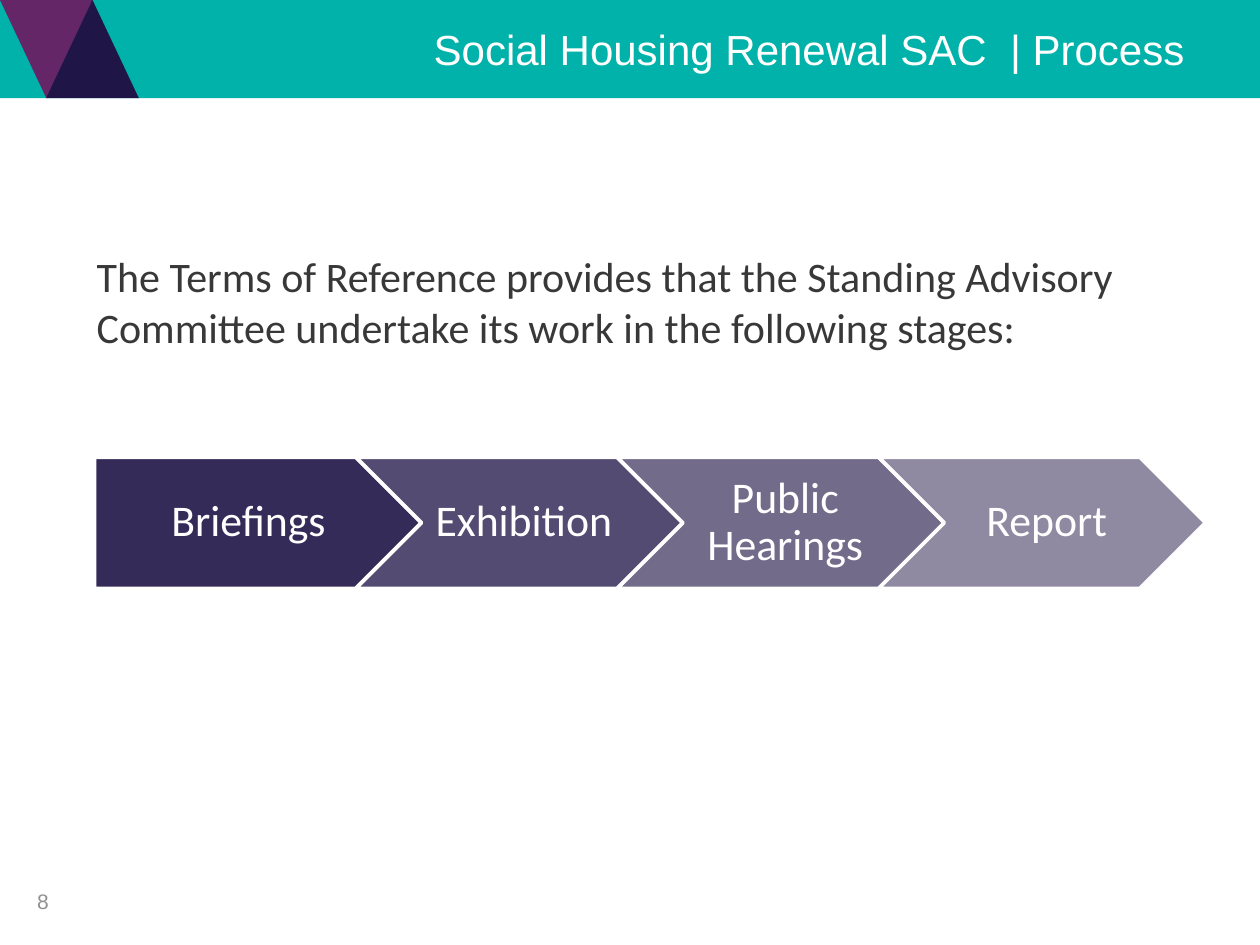
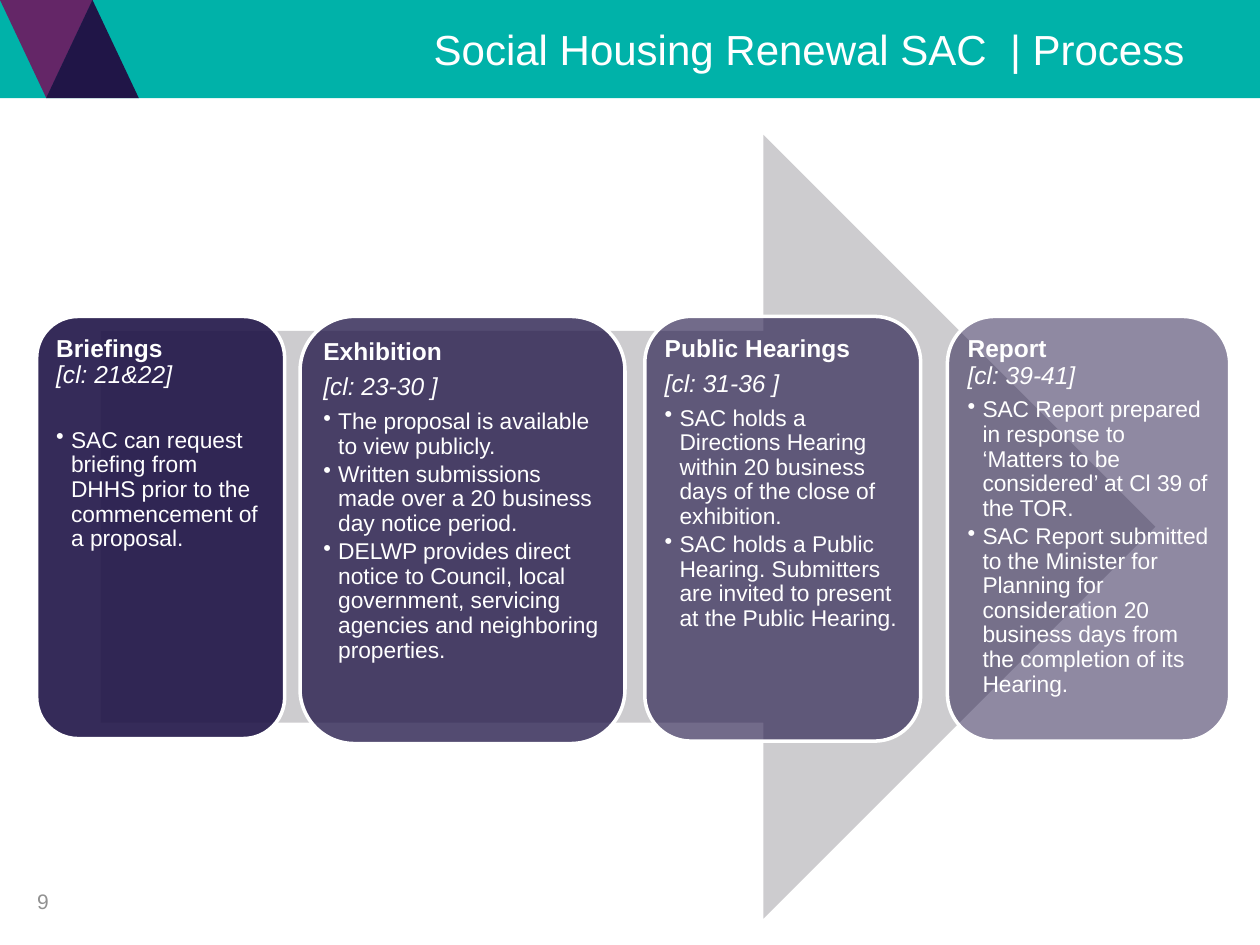
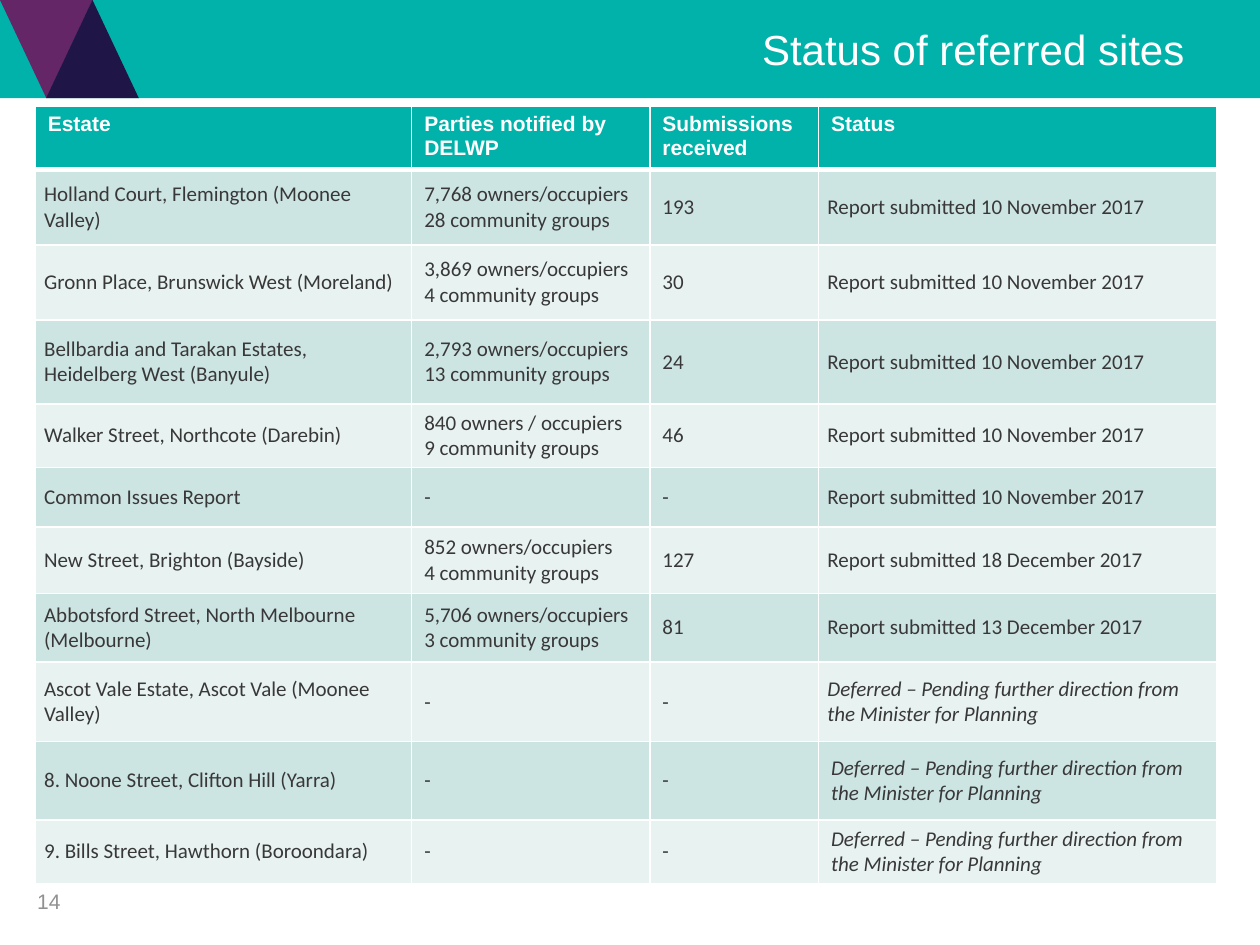
from lxml import etree
from pptx import Presentation
from pptx import util as u
from pptx.dml.color import RGBColor
from pptx.enum import shapes, text
from pptx.oxml import ns

TEAL = RGBColor(0x00, 0xB2, 0xA9)
PLUM = RGBColor(0x64, 0x26, 0x67)
NAVY = RGBColor(0x20, 0x15, 0x47)
WHITE = RGBColor(0xFF, 0xFF, 0xFF)
INK = RGBColor(0x39, 0x38, 0x38)
PAGE_GREY = RGBColor(0x91, 0x91, 0x91)
ARROW_GREY = RGBColor(0xCD, 0xCC, 0xCF)
ROW_TINTS = [RGBColor(0xCC, 0xE4, 0xE2), RGBColor(0xE7, 0xF2, 0xF1)]
STAGE_OPACITY = [90, 77, 63, 50]

PRESET = shapes.MSO_SHAPE
ALIGN = text.PP_ALIGN
MIDDLE = text.MSO_ANCHOR.MIDDLE


def add_block(slide, preset, box, color, opacity=None):
    """Add a plain filled shape; stage blocks get an opacity and a white outline."""
    block = slide.shapes.add_shape(preset, *[u.Cm(length) for length in box])
    block.shadow.inherit = False
    block.fill.solid()
    block.fill.fore_color.rgb = color
    if opacity is None:
        block.line.fill.background()
    else:
        block.line.color.rgb = WHITE
        block.line.width = u.Pt(2)
        tint = block.fill._xPr.find(".//" + ns.qn("a:srgbClr"))
        etree.SubElement(tint, ns.qn("a:alpha"), val=str(opacity * 1000))
    return block


def style(paragraph, size, color, font="Arial", align=ALIGN.LEFT, bold=False, italic=False):
    paragraph.alignment = align
    for run in paragraph.runs:
        run.font.size = u.Pt(size)
        run.font.name = font
        run.font.color.rgb = color
        run.font.bold = bold
        run.font.italic = italic


prs = Presentation()
prs.slide_width, prs.slide_height = u.Cm(25.4), u.Cm(19.05)

# Shared band, title and page number
pages = [
    ("Social Housing Renewal SAC  | Process", "8"),
    ("Social Housing Renewal SAC  | Process", "9"),
    ("Status of referred sites", "14"),
]
for title, number in pages:
    slide = prs.slides.add_slide(prs.slide_layouts[6])
    add_block(slide, PRESET.RECTANGLE, (0, 0, 25.4, 1.98), TEAL)
    plum_triangle = add_block(slide, PRESET.ISOSCELES_TRIANGLE, (0, 0, 1.87, 1.98), PLUM)
    plum_triangle.rotation = 180
    add_block(slide, PRESET.ISOSCELES_TRIANGLE, (0.93, 0, 1.87, 1.98), NAVY)
    for words, box, size, color, align in [
        (title, (3.3, 0, 20.83, 1.98), 24, WHITE, ALIGN.RIGHT),
        (number, (0.5, 17.65, 5.92, 1.02), 12, PAGE_GREY, ALIGN.LEFT),
    ]:
        frame = slide.shapes.add_textbox(*[u.Cm(length) for length in box]).text_frame
        frame.word_wrap = True
        frame.vertical_anchor = MIDDLE
        frame.text = words
        style(frame.paragraphs[0], size, color, align=align)

overview, stages, sites = prs.slides

# Overview: introduction
intro = overview.shapes.add_textbox(u.Cm(1.7), u.Cm(4.93), u.Cm(22.4), u.Cm(2.59)).text_frame
intro.word_wrap = True
intro.text = ("The Terms of Reference provides that the Standing Advisory Committee "
              "undertake its work in the following stages:")
style(intro.paragraphs[0], 24, INK, "Calibri")

# Overview: chain of stages
stage_names = ["Briefings", "Exhibition", "Public Hearings", "Report"]
for i, (name, opacity) in enumerate(zip(stage_names, STAGE_OPACITY)):
    preset = PRESET.CHEVRON if i else PRESET.PENTAGON
    link = add_block(overview, preset, (1.91 + i * 5.27, 9.22, 6.58, 2.64), NAVY, opacity)
    frame = link.text_frame
    frame.word_wrap = True
    frame.vertical_anchor = MIDDLE
    frame.margin_left = u.Cm(0.28 if i else 0.38)
    frame.margin_right = u.Cm(0.1)
    frame.margin_top = frame.margin_bottom = u.Cm(0.18)
    frame.text = name
    style(frame.paragraphs[0], 25, WHITE, "Calibri", ALIGN.CENTER)
    frame.paragraphs[0].line_spacing = 0.9

# Stages in detail: arrow behind the cards
add_block(stages, PRESET.RIGHT_ARROW, (2.03, 2.72, 21.26, 15.8), ARROW_GREY)

# Cards: left, width, height, inset, clause, gap after name, gap after clause, points
cards = [
    (0.74, 5, 8.51, 0.15, "[cl: 21&22]", 0, 22.6, [
        "SAC can request briefing from DHHS prior to the commencement of a proposal."]),
    (6.05, 6.55, 8.61, 0.15, "[cl: 23-30 ]", 4.9, 4.9, [
        "The proposal is available to view publicly.",
        "Written submissions made over a 20 business day notice period.",
        "DELWP provides direct notice to Council, local government, servicing agencies "
        "and neighboring properties."]),
    (13, 5.56, 8.56, 0.13, "[cl: 31-36 ]", 4.9, 4.9, [
        "SAC holds a Directions Hearing within 20 business days of the close of exhibition.",
        "SAC holds a Public Hearing. Submitters are invited to present at the Public Hearing."]),
    (19.1, 5.69, 8.56, 0.13, "[cl: 39-41]", 0, 4.9, [
        "SAC Report prepared in response to ‘Matters to be considered’ at Cl 39 of the TOR.",
        "SAC Report submitted to the Minister for Planning for consideration 20 business days "
        "from the completion of its Hearing."]),
]
for name, opacity, card in zip(stage_names, STAGE_OPACITY, cards):
    left, width, height, inset, clause, name_gap, clause_gap, points = card
    block = add_block(stages, PRESET.ROUNDED_RECTANGLE, (left, 6.38, width, height), NAVY, opacity)
    frame = block.text_frame
    frame.word_wrap = True
    frame.vertical_anchor = text.MSO_ANCHOR.TOP
    frame.margin_left = frame.margin_right = u.Cm(inset)
    frame.margin_top = frame.margin_bottom = u.Cm(inset)
    frame.text = "\n".join([name, clause, *points])
    heading, reference, *bullets = frame.paragraphs
    style(heading, 14, WHITE, bold=True)
    heading.space_after = u.Pt(name_gap)
    style(reference, 14, WHITE, italic=True)
    reference.space_after = u.Pt(clause_gap)
    for bullet in bullets:
        style(bullet, 13, WHITE)
        bullet.space_after = u.Pt(2)
    for paragraph in frame.paragraphs:
        paragraph.line_spacing = 0.9
    for bullet in bullets:
        props = bullet._p.get_or_add_pPr()
        props.set("marL", str(u.Cm(0.3)))
        props.set("indent", str(u.Cm(-0.3)))
        etree.SubElement(props, ns.qn("a:buChar"), char="•")

# Referred sites table
submitted = "Report submitted 10 November 2017"
deferred = "Deferred – Pending further direction from the Minister for Planning"
rows = [
    ("Estate", "Parties notified by DELWP", "Submissions received", "Status"),
    ("Holland Court, Flemington (Moonee Valley)",
     "7,768 owners/occupiers\n28 community groups", "193", submitted),
    ("Gronn Place, Brunswick West (Moreland)",
     "3,869 owners/occupiers\n4 community groups", "30", submitted),
    ("Bellbardia and Tarakan Estates, Heidelberg West (Banyule)",
     "2,793 owners/occupiers\n13 community groups", "24", submitted),
    ("Walker Street, Northcote (Darebin)",
     "840 owners / occupiers\n9 community groups", "46", submitted),
    ("Common Issues Report", "-", "-", submitted),
    ("New Street, Brighton (Bayside)",
     "852 owners/occupiers\n4 community groups", "127", "Report submitted 18 December 2017"),
    ("Abbotsford Street, North Melbourne (Melbourne)",
     "5,706 owners/occupiers\n3 community groups", "81", "Report submitted 13 December 2017"),
    ("Ascot Vale Estate, Ascot Vale (Moonee Valley)", "-", "-", deferred),
    ("8. Noone Street, Clifton Hill (Yarra)", "-", "-", deferred),
    ("9. Bills Street, Hawthorn (Boroondara)", "-", "-", deferred),
]
column_widths = [7.59, 4.8, 3.4, 8.03]
row_heights = [1.19, 1.53, 1.51, 1.69, 1.28, 1.2, 1.34, 1.39, 1.6, 1.58, 1.28]
table = sites.shapes.add_table(
    len(rows), len(column_widths), u.Cm(0.71), u.Cm(2.14),
    u.Cm(sum(column_widths)), u.Cm(sum(row_heights))).table
for column, width in zip(table.columns, column_widths):
    column.width = u.Cm(width)
for row, height in zip(table.rows, row_heights):
    row.height = u.Cm(height)

for r, entries in enumerate(rows):
    for c, entry in enumerate(entries):
        cell = table.cell(r, c)
        cell.text = entry
        for paragraph in cell.text_frame.paragraphs:
            if r == 0:
                style(paragraph, 12, WHITE, bold=True)
            else:
                style(paragraph, 12, INK, "Calibri", italic=entry == deferred)
        if r > 0:
            cell.vertical_anchor = MIDDLE
            if c == 0 or (c == 3 and r < 9):
                cell.margin_left = cell.margin_right = u.Cm(0.18)
                cell.margin_top = cell.margin_bottom = 0

        # White rules, heavier under the header
        for side in ("lnL", "lnR", "lnT", "lnB"):
            heavy = (r, side) in [(0, "lnB"), (1, "lnT")]
            rule = etree.SubElement(cell._tc.get_or_add_tcPr(), ns.qn("a:" + side),
                                    w=str(u.Pt(3 if heavy else 1)))
            ink = etree.SubElement(rule, ns.qn("a:solidFill"))
            etree.SubElement(ink, ns.qn("a:srgbClr"), val=str(WHITE))
        cell.fill.solid()
        cell.fill.fore_color.rgb = ROW_TINTS[(r - 1) % 2] if r else TEAL

prs.save("out.pptx")
